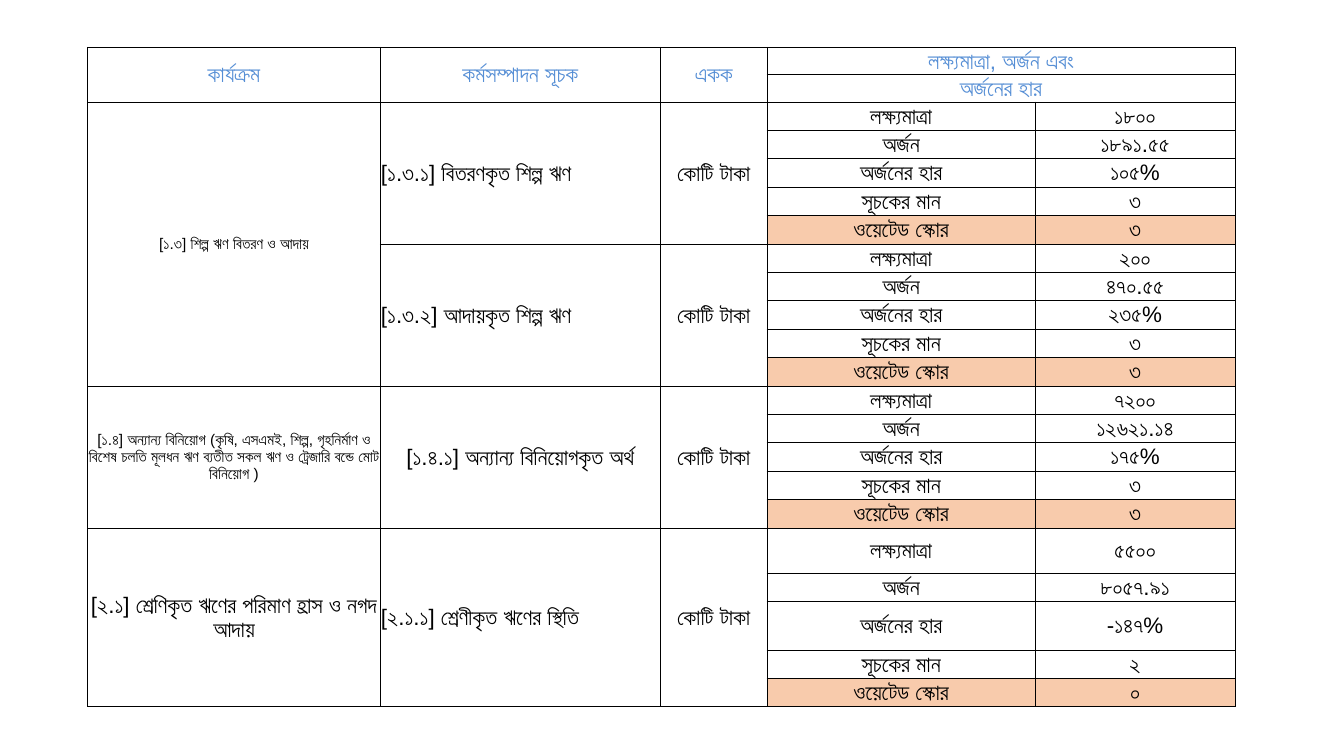
"""Build a slide with a table of performance indicators, targets and achievements."""
from dataclasses import dataclass
from typing import Optional

from lxml.etree import SubElement
from pptx import Presentation
from pptx.dml.color import RGBColor
from pptx.enum.text import MSO_ANCHOR, PP_ALIGN
from pptx.oxml.ns import qn
from pptx.table import Table, _Cell
from pptx.util import Cm, Pt

FONT = "Arial"
BLACK, HEADER_BLUE, SCORE_PEACH = "000000", "558ED5", "F8CBAC"
UNIT = "কোটি টাকা"
MEASURES = ("লক্ষ্যমাত্রা", "অর্জন", "অর্জনের হার", "সূচকের মান", "ওয়েটেড স্কোর")
COLUMN_WIDTHS = (7.37, 7.06, 2.69, 6.76, 5.03)
HEADER_HEIGHTS = (0.69, 0.69)
GROUP_HEIGHTS = (0.71, 0.71, 0.72, 0.71, 0.73)
LAST_GROUP_HEIGHTS = (1.14, 0.71, 1.22, 0.71, 0.72)
CELL_FORMAT = {
    "margin_left": Cm(0.02),
    "margin_right": Cm(0.02),
    "margin_top": Cm(0.02),
    "margin_bottom": Cm(0),
    "vertical_anchor": MSO_ANCHOR.MIDDLE,
}


@dataclass
class Entry:
    """Text of one cell, with its place, span and look."""

    row: int
    column: int
    text: str
    rows: int = 1
    columns: int = 1
    size: int = 16
    color: str = BLACK
    align: PP_ALIGN = PP_ALIGN.CENTER
    fill: Optional[str] = None


@dataclass
class Indicator:
    """One indicator with the value of each measure."""

    name: str
    values: tuple[str, ...]
    align: PP_ALIGN = PP_ALIGN.LEFT


@dataclass
class Activity:
    """One activity with its indicators."""

    name: str
    size: int
    indicators: list[Indicator]


HEADERS = [
    Entry(0, 0, "কার্যক্রম", rows=2, color=HEADER_BLUE),
    Entry(0, 1, "কর্মসম্পাদন সূচক", rows=2, color=HEADER_BLUE),
    Entry(0, 2, "একক", rows=2, color=HEADER_BLUE),
    Entry(0, 3, "লক্ষ্যমাত্রা, অর্জন এবং", columns=2, color=HEADER_BLUE),
    Entry(1, 3, "অর্জনের হার", columns=2, color=HEADER_BLUE),
]
ACTIVITIES = [
    Activity("[১.৩] শিল্প ঋণ বিতরণ ও আদায়", 11, [
        Indicator("[১.৩.১] বিতরণকৃত শিল্প ঋণ", ("১৮০০", "১৮৯১.৫৫", "১০৫%", "৩", "৩")),
        Indicator("[১.৩.২] আদায়কৃত শিল্প ঋণ", ("২০০", "৪৭০.৫৫", "২৩৫%", "৩", "৩")),
    ]),
    Activity("[১.৪] অন্যান্য বিনিয়োগ (কৃষি, এসএমই, শিল্প, গৃহনির্মাণ ও বিশেষ চলতি মূলধন ঋণ "
             "ব্যতীত সকল ঋণ ও ট্রেজারি বন্ডে মোট বিনিয়োগ )", 11, [
        Indicator("[১.৪.১] অন্যান্য বিনিয়োগকৃত অর্থ",
                  ("৭২০০", "১২৬২১.১৪", "১৭৫%", "৩", "৩"), PP_ALIGN.CENTER),
    ]),
    Activity("[২.১] শ্রেণিকৃত ঋণের পরিমাণ হ্রাস ও নগদ আদায়", 16, [
        Indicator("[২.১.১] শ্রেণীকৃত ঋণের স্থিতি", ("৫৫০০", "৮০৫৭.৯১", "-১৪৭%", "২", "০")),
    ]),
]


def color_of(value: str) -> RGBColor:
    """Turn a hex string into a colour."""
    return RGBColor.from_string(value)


def style_cell(cell: _Cell) -> None:
    """Give a cell its margins, anchor, thin black borders and no fill."""
    for name, value in CELL_FORMAT.items():
        setattr(cell, name, value)
    properties = cell._tc.get_or_add_tcPr()
    for side in ("a:lnL", "a:lnR", "a:lnT", "a:lnB"):
        line = SubElement(properties, qn(side), w=str(Pt(0.5)))
        SubElement(SubElement(line, qn("a:solidFill")), qn("a:srgbClr"), val=BLACK)
    cell.fill.background()


def write_entry(table: Table, entry: Entry) -> None:
    """Merge the span of an entry, then write and format its text."""
    cell = table.cell(entry.row, entry.column)
    if entry.rows * entry.columns > 1:
        cell.merge(table.cell(entry.row + entry.rows - 1, entry.column + entry.columns - 1))
    if entry.fill:
        cell.fill.solid()
        cell.fill.fore_color.rgb = color_of(entry.fill)
    paragraph = cell.text_frame.paragraphs[0]
    paragraph.alignment = entry.align
    run = paragraph.add_run()
    run.text = entry.text
    for name, value in {"name": FONT, "size": Pt(entry.size), "bold": False}.items():
        setattr(run.font, name, value)
    run.font.color.rgb = color_of(entry.color)
    SubElement(run._r.get_or_add_rPr(), qn("a:cs"), typeface=FONT)


def body_entries() -> list[Entry]:
    """Place all activities, indicators and measures below the header."""
    entries: list[Entry] = []
    row = len(HEADER_HEIGHTS)
    count = len(MEASURES)
    for activity in ACTIVITIES:
        entries.append(Entry(row, 0, activity.name, size=activity.size,
                             rows=count * len(activity.indicators)))
        for indicator in activity.indicators:
            entries.append(Entry(row, 1, indicator.name, rows=count, align=indicator.align))
            entries.append(Entry(row, 2, UNIT, rows=count))
            for measure, value in zip(MEASURES, indicator.values):
                fill = SCORE_PEACH if measure == MEASURES[-1] else None
                entries.append(Entry(row, 3, measure, fill=fill))
                entries.append(Entry(row, 4, value, fill=fill))
                row += 1
    return entries


def main() -> None:
    """Create the presentation and save it."""
    presentation = Presentation()
    presentation.slide_width, presentation.slide_height = Cm(33.87), Cm(19.05)
    slide = presentation.slides.add_slide(presentation.slide_layouts[6])
    heights = HEADER_HEIGHTS + GROUP_HEIGHTS * 3 + LAST_GROUP_HEIGHTS
    shape = slide.shapes.add_table(len(heights), len(COLUMN_WIDTHS), Cm(2.21), Cm(1.19),
                                   Cm(sum(COLUMN_WIDTHS)), Cm(sum(heights)))
    table = shape.table
    table.first_row = table.horz_banding = False
    for column, width in zip(table.columns, COLUMN_WIDTHS):
        column.width = Cm(width)
    for row, height in zip(table.rows, heights):
        row.height = Cm(height)
    for cell in table.iter_cells():
        style_cell(cell)
    for entry in HEADERS + body_entries():
        write_entry(table, entry)
    presentation.save("out.pptx")


if __name__ == "__main__":
    main()
